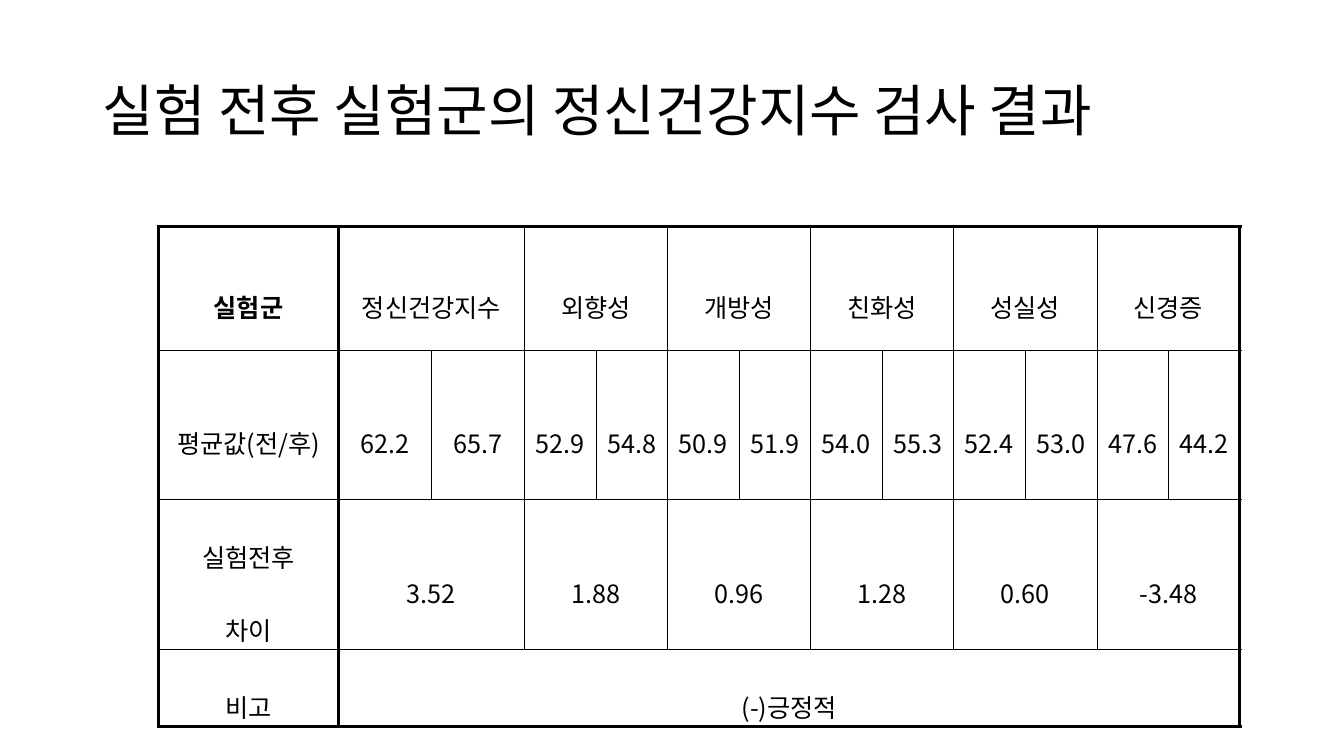
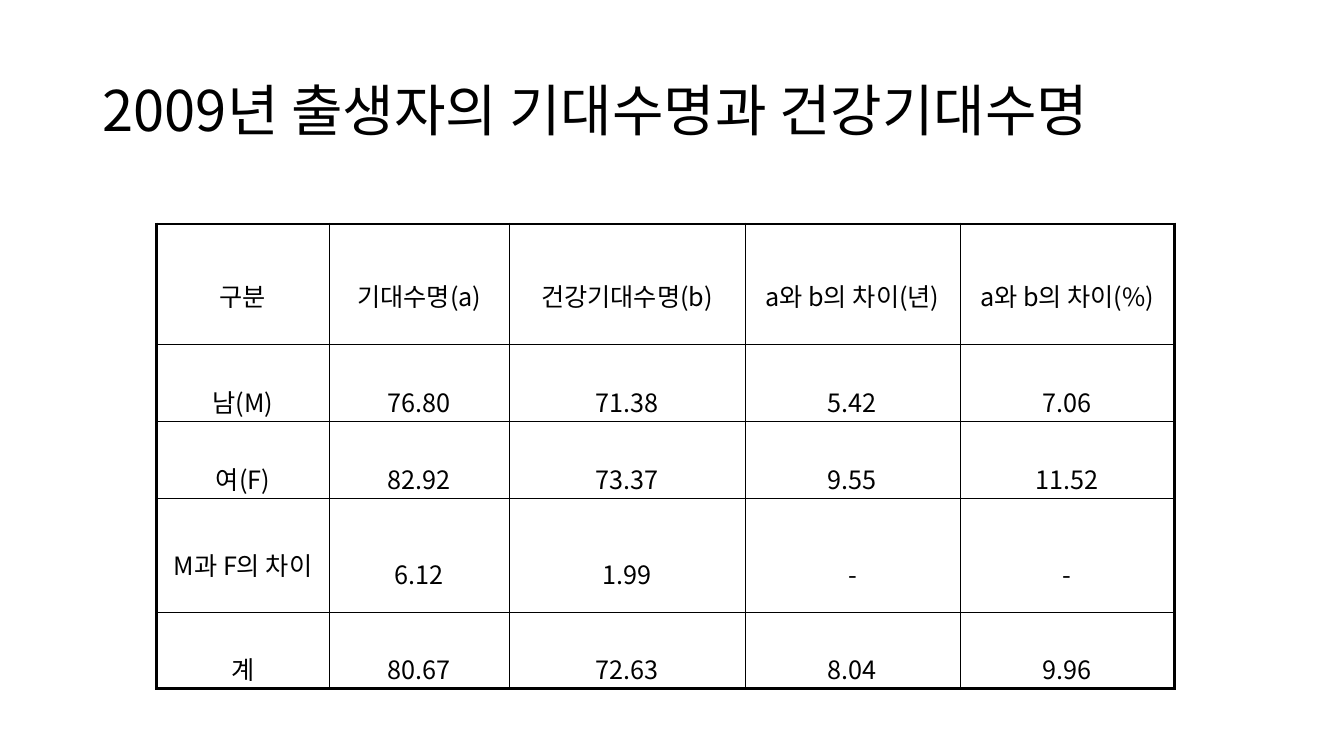
from dataclasses import dataclass

from lxml import etree
from pptx import Presentation
from pptx.dml.color import RGBColor
from pptx.enum.text import MSO_ANCHOR, MSO_AUTO_SIZE, PP_ALIGN
from pptx.oxml.ns import qn
from pptx.util import Inches, Pt

# Shared look
BLACK = RGBColor(0x00, 0x00, 0x00)
FONT = "Noto Sans CJK KR"
LEFT, CENTER = PP_ALIGN.LEFT, PP_ALIGN.CENTER
MIDDLE = MSO_ANCHOR.MIDDLE
NO_FIT = MSO_AUTO_SIZE.NONE
PLAIN = "{2D5ABB26-0587-4C30-8999-92F81FD0307C}"  # table style without grid
WIDE, HIGH = 13.33, 7.5
EDGE = 0.92
THIN = 0.28
PAD_X, PAD_Y = 0.07, 0.02
TITLE_ONLY = 5


@dataclass(frozen=True)
class Row:
    """A table row; every cell after the first covers `span` columns."""
    height: float
    texts: list[str]
    span: int = 1
    space: float = 2.0
    lead: float | None = None  # line spacing of the first cell, if other
    bold: bool = False  # first cell in bold


@dataclass(frozen=True)
class Page:
    title: str
    left: float
    top: float
    cols: list[float]
    rows: list[Row]
    thick: float
    rules: set[int]  # column lines drawn thick


PAGES = [
    Page(
        "실험 전후 실험군의 정신건강지수 검사 결과", 1.57, 2.25,
        [1.79] + [0.92] * 2 + [0.71] * 10,
        [
            Row(1.22, ["실험군", "정신건강지수", "외향성", "개방성", "친화성",
                       "성실성", "신경증"], span=2, bold=True),
            Row(1.22, ["평균값(전/후)", "62.2", "65.7", "52.9", "54.8",
                       "50.9", "51.9", "54.0", "55.3", "52.4", "53.0",
                       "47.6", "44.2"]),
            Row(1.22, ["실험전후\n차이", "3.52", "1.88", "0.96", "1.28",
                       "0.60", "-3.48"], span=2),
            Row(0.64, ["비고", "(-)긍정적"], span=12),
        ],
        thick=2.55, rules={0, 1, 13},
    ),
    Page(
        "2009년 출생자의 기대수명과 건강기대수명", 1.55, 2.22,
        [1.72, 1.78, 2.34, 2.13, 2.13],
        [
            Row(1.1, ["구분", "기대수명(a)", "건강기대수명(b)",
                      "a와 b의 차이(년)", "a와 b의 차이(%)"], space=1.6),
            Row(0.75, ["남(M)", "76.80", "71.38", "5.42", "7.06"]),
            Row(0.75, ["여(F)", "82.92", "73.37", "9.55", "11.52"]),
            Row(1.03, ["M과 F의 차이", "6.12", "1.99", "-", "-"], lead=1.5),
            Row(0.75, ["계", "80.67", "72.63", "8.04", "9.96"]),
        ],
        thick=1.98, rules={0, 5},
    ),
]


def write(frame, text: str, *, size: float, space: float,
          align=CENTER, bold: bool = False) -> None:
    """Fill a text frame, one paragraph for each line."""
    for num, line in enumerate(text.split("\n")):
        para = frame.add_paragraph() if num else frame.paragraphs[0]
        para.alignment, para.line_spacing = align, space
        run = para.add_run()
        run.text = line
        font = run.font
        font.size, font.bold, font.name = Pt(size), bold, FONT
        font.color.rgb = BLACK
        props = run._r.get_or_add_rPr()
        etree.SubElement(props, qn("a:ea"), typeface=FONT)


def border(cell, widths: dict[str, float]) -> None:
    """Draw cell edges; the keys are L, R, T, B in that order."""
    props = cell._tc.get_or_add_tcPr()
    for num, (side, width) in enumerate(widths.items()):
        line = etree.Element(qn(f"a:ln{side}"), w=str(int(Pt(width))))
        fill = etree.SubElement(line, qn("a:solidFill"))
        etree.SubElement(fill, qn("a:srgbClr"), val=str(BLACK))
        props.insert(num, line)


def add_title(slide, text: str) -> None:
    title = slide.shapes.title
    title.left, title.top = Inches(EDGE), Inches(0.4)
    title.width, title.height = Inches(WIDE - 2 * EDGE), Inches(1.45)
    frame = title.text_frame
    frame.word_wrap, frame.auto_size = True, NO_FIT
    frame.vertical_anchor = MIDDLE
    write(frame, text, size=40, space=0.9, align=LEFT)


def add_grid(slide, page: Page) -> None:
    count = len(page.rows)
    shape = slide.shapes.add_table(
        count, len(page.cols), Inches(page.left), Inches(page.top),
        Inches(sum(page.cols)), Inches(sum(row.height for row in page.rows)))
    table = shape.table
    table.first_row = table.horz_banding = False
    for style in shape.element.iter(qn("a:tableStyleId")):
        style.text = PLAIN
    for col, width in zip(table.columns, page.cols):
        col.width = Inches(width)

    def rule(heavy: bool) -> float:
        return page.thick if heavy else THIN

    for y, row in enumerate(page.rows):
        table.rows[y].height = Inches(row.height)
        for num, text in enumerate(row.texts):
            # The first cell is one column wide, the rest follow the span
            x = 1 + (num - 1) * row.span if num else 0
            end = x + row.span if num else 1
            cell = table.cell(y, x)
            if end - x > 1:
                cell.merge(table.cell(y, end - 1))
            cell.margin_left = cell.margin_right = Inches(PAD_X)
            cell.margin_top = cell.margin_bottom = Inches(PAD_Y)
            cell.vertical_anchor = MIDDLE
            cell.fill.background()
            first = num == 0
            space = row.lead if first and row.lead else row.space
            write(cell.text_frame, text, size=18, space=space,
                  bold=first and row.bold)
            border(cell, {"L": rule(x in page.rules),
                          "R": rule(end in page.rules),
                          "T": rule(y == 0),
                          "B": rule(y == count - 1)})


def main() -> None:
    deck = Presentation()
    deck.slide_width, deck.slide_height = Inches(WIDE), Inches(HIGH)
    for page in PAGES:
        slide = deck.slides.add_slide(deck.slide_layouts[TITLE_ONLY])
        add_title(slide, page.title)
        add_grid(slide, page)
    deck.save("out.pptx")


if __name__ == "__main__":
    main()
